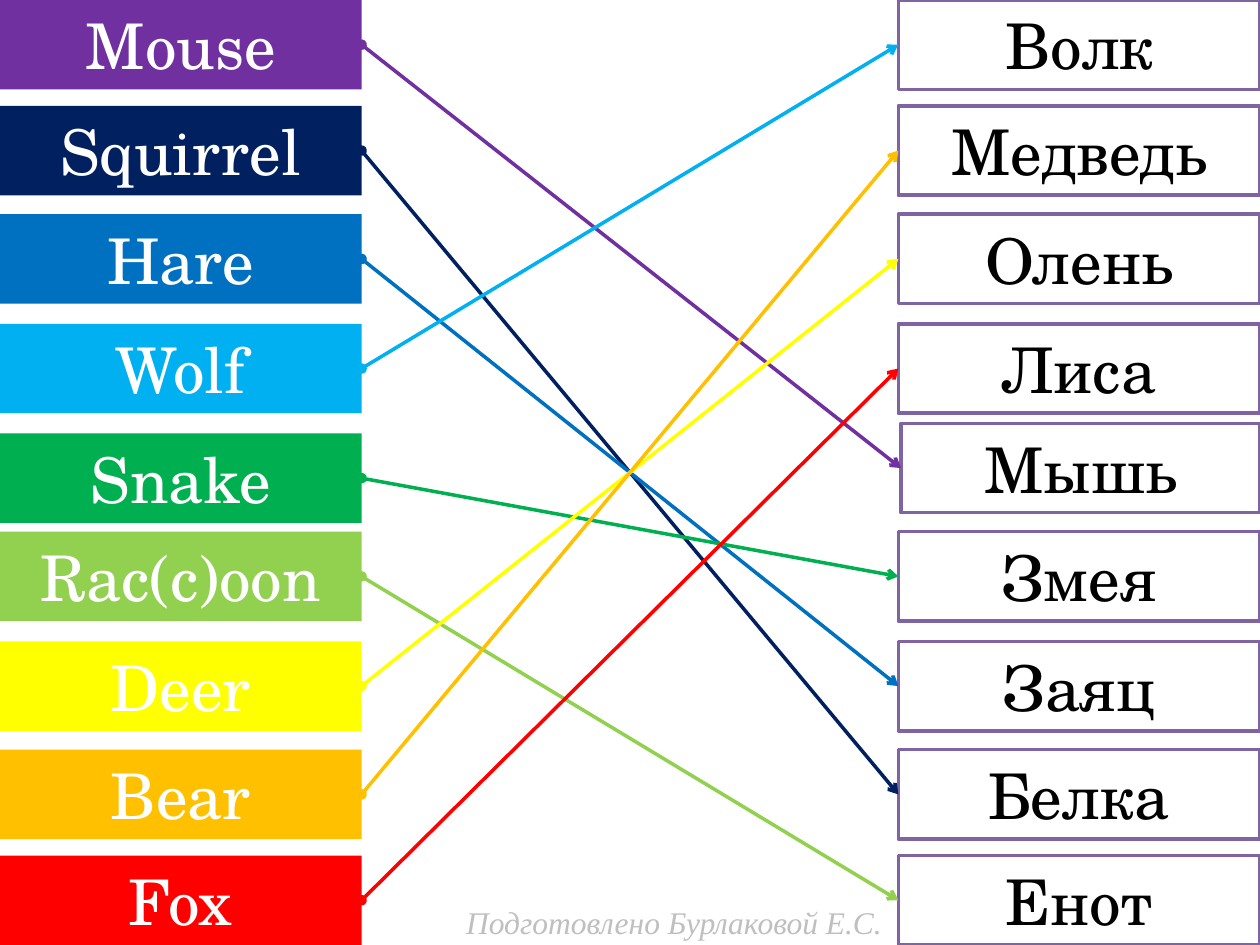
from lxml.etree import SubElement
from pptx import Presentation
from pptx.dml.color import RGBColor
from pptx.enum.shapes import MSO_CONNECTOR, MSO_SHAPE
from pptx.enum.text import MSO_ANCHOR, MSO_AUTO_SIZE, PP_ALIGN
from pptx.oxml.ns import qn
from pptx.util import Inches, Pt

TOPS = [0, 0.84, 1.7, 2.57, 3.44, 4.22, 5.09, 5.95, 6.79]
CARD_WIDTH, CARD_HEIGHT, RIGHT_EDGE = 2.87, 0.71, 10
MOUSE_TOP, MOUSE_WIDTH = 3.36, 2.85
ANIMALS = [
    ("Mouse", "Мышь", "7030A0"),
    ("Squirrel", "Белка", "002060"),
    ("Hare", "Заяц", "0070C0"),
    ("Wolf", "Волк", "00B0F0"),
    ("Snake", "Змея", "00B050"),
    ("Rac(c)oon", "Енот", "92D050"),
    ("Deer", "Олень", "FFFF00"),
    ("Bear", "Медведь", "FFC000"),
    ("Fox", "Лиса", "FF0000"),
]
TRANSLATIONS = ["Волк", "Медведь", "Олень", "Лиса", "Мышь",
                "Змея", "Заяц", "Белка", "Енот"]


def color(code):
    """Turn a hex string into a colour."""
    return RGBColor.from_string(code)


def write(box, text, font="TeX Gyre Schola", size=36, ink="000000",
          align=PP_ALIGN.CENTER, anchor=MSO_ANCHOR.MIDDLE, italic=False):
    """Put one formatted line of text into a box."""
    frame = box.text_frame
    frame.word_wrap = True
    frame.auto_size = MSO_AUTO_SIZE.SHAPE_TO_FIT_TEXT
    frame.vertical_anchor = anchor
    para = frame.paragraphs[0]
    para.alignment = align
    span = para.add_run()
    span.text = text
    span.font.name = font
    span.font.size = Pt(size)
    span.font.italic = italic
    span.font.color.rgb = color(ink)


def add_card(page, text, left, top, width=CARD_WIDTH, fill="FFFFFF",
             ink="000000", outline=None):
    """Add a word card and return it."""
    card = page.shapes.add_shape(MSO_SHAPE.RECTANGLE, Inches(left), Inches(top),
                                 Inches(width), Inches(CARD_HEIGHT))
    card.shadow.inherit = False
    card.fill.solid()
    card.fill.fore_color.rgb = color(fill)
    if outline:
        card.line.color.rgb = color(outline)
        card.line.width = Pt(2)
    else:
        card.line.fill.background()
    write(card, text, ink=ink)
    return card


def add_translation(page, text, top):
    """Add a card in the right-hand column."""
    width = CARD_WIDTH
    if text == "Мышь":
        top, width = MOUSE_TOP, MOUSE_WIDTH
    return add_card(page, text, RIGHT_EDGE - width, top, width, outline="8064A2")


def join(page, word, translation, ink):
    """Draw an arrow from a word to its translation."""
    arrow = page.shapes.add_connector(MSO_CONNECTOR.STRAIGHT, 0, 0, 0, 0)
    arrow.begin_connect(word, 3)
    arrow.end_connect(translation, 1)
    arrow.line.color.rgb = color(ink)
    arrow.line.width = Pt(2)
    outline = arrow.line._get_or_add_ln()
    SubElement(outline, qn("a:headEnd"), type="oval")
    SubElement(outline, qn("a:tailEnd"), type="arrow")
    SubElement(arrow._element.spPr, qn("a:effectLst"))


def add_credit(page):
    """Add the author's line at the bottom."""
    box = page.shapes.add_textbox(Inches(2.87), Inches(7.12), Inches(4.23), Inches(0.4))
    write(box, "Подготовлено Бурлаковой Е.С.", font="Times New Roman", size=18,
          ink="BFBFBF", align=PP_ALIGN.RIGHT, anchor=MSO_ANCHOR.TOP, italic=True)


def main():
    """Build the matching exercise."""
    deck = Presentation()
    deck.slide_width, deck.slide_height = Inches(10), Inches(7.5)
    page = deck.slides.add_slide(deck.slide_layouts[6])
    words = [add_card(page, english, 0, top, fill=fill, ink="FFFFFF")
             for (english, _, fill), top in zip(ANIMALS, TOPS)]
    translations = {text: add_translation(page, text, top)
                    for text, top in zip(TRANSLATIONS, TOPS)}
    for word, (_, russian, ink) in zip(words, ANIMALS):
        join(page, word, translations[russian], ink)
    add_credit(page)
    deck.save("out.pptx")


if __name__ == "__main__":
    main()
